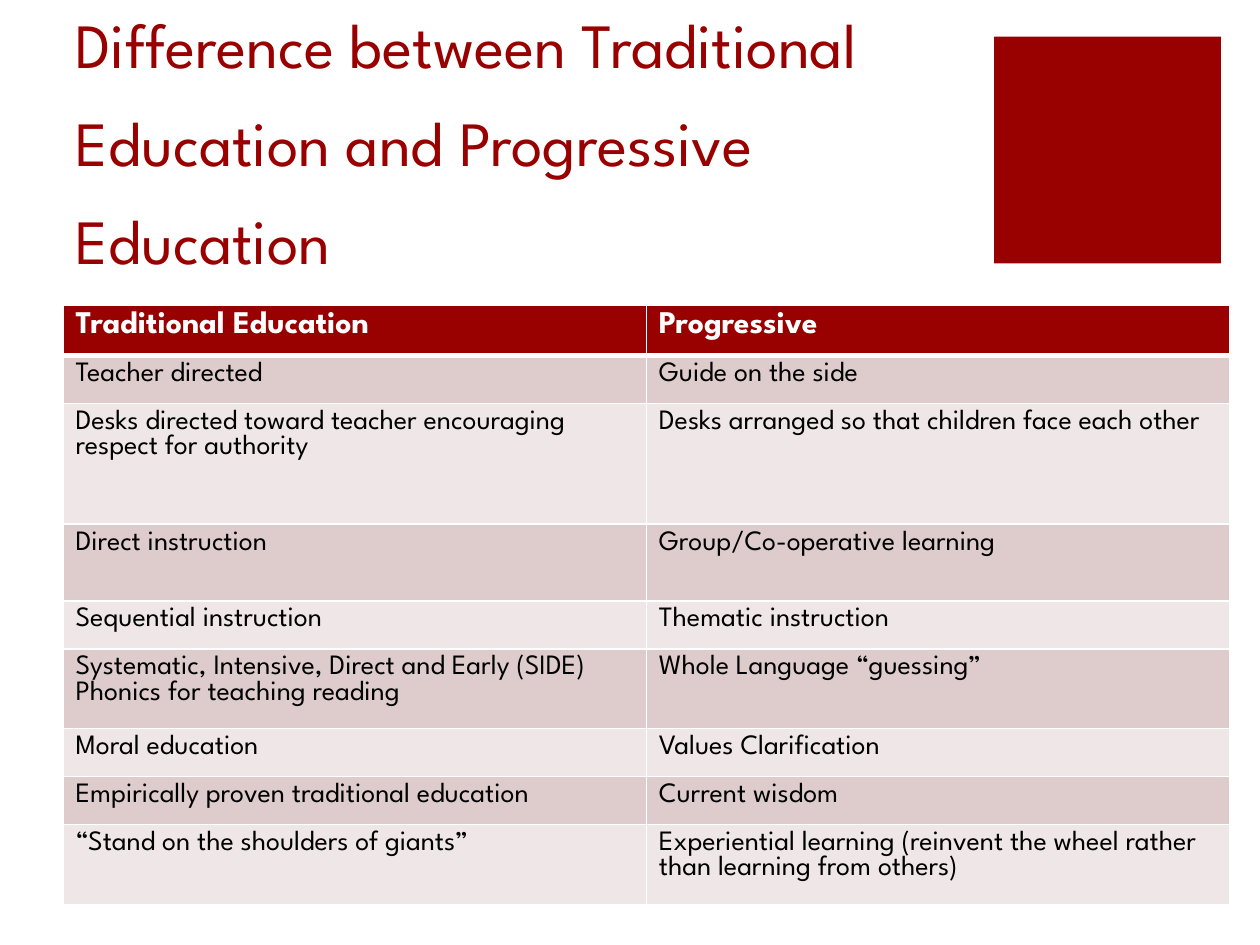
from lxml import etree
from pptx import Presentation, util as u
from pptx.dml.color import RGBColor
from pptx.enum import shapes, text
from pptx.oxml import ns

FONT = "League Spartan"
RED, WHITE, BLACK = "990000", "FFFFFF", "000000"
BANDS = ["EFE7E7", "DECCCC"]
ROWS = [
    (0.38, "Traditional Education", "Progressive"),
    (0.38, "Teacher directed", "Guide on the side"),
    (0.96, "Desks directed toward teacher encouraging respect for authority",
     "Desks arranged so that children face each other"),
    (0.61, "Direct instruction", "Group/Co-operative learning"),
    (0.38, "Sequential instruction", "Thematic instruction"),
    (0.61, "Systematic, Intensive, Direct and Early (SIDE) Phonics for teaching reading",
     "Whole Language “guessing”"),
    (0.38, "Moral education", "Values Clarification"),
    (0.38, "Empirically proven traditional education", "Current wisdom"),
    (0.38, "“Stand on the shoulders of giants”",
     "Experiential learning (reinvent the wheel rather than learning from others)"),
]


def paint(target, color):
    if hasattr(target, "solid"):
        target.solid()
        target = target.fore_color
    else:
        target = target.color
    target.rgb = RGBColor.from_string(color)


def border(cell, side, points):
    line = etree.SubElement(cell._tc.get_or_add_tcPr(), ns.qn(f"a:ln{side}"), w=str(u.Pt(points)))
    fill = etree.SubElement(line, ns.qn("a:solidFill"))
    etree.SubElement(fill, ns.qn("a:srgbClr"), val=WHITE)


deck = Presentation()
deck.slide_width, deck.slide_height = u.Inches(10), u.Inches(7.5)
page = deck.slides.add_slide(deck.slide_layouts[6])
margin = u.Inches(0.5)
column_width = u.Inches(4.63)

square = page.shapes.add_shape(
    shapes.MSO_SHAPE.RECTANGLE, u.Inches(7.89), u.Inches(0.29), u.Inches(1.8), u.Inches(1.8))
square.shadow.inherit = False
paint(square.fill, RED)
square.line.fill.background()

title = page.shapes.add_textbox(margin, u.Inches(0.19), u.Inches(7.12), u.Inches(2.06))
title.text_frame.word_wrap = True
title.text_frame.vertical_anchor = text.MSO_ANCHOR.BOTTOM
para = title.text_frame.paragraphs[0]
para.text = "Difference between Traditional Education and Progressive Education"
para.line_spacing = 1.3
para.font.name, para.font.size = FONT, u.Pt(36)
paint(para.font, RED)

height = u.Inches(sum(row[0] for row in ROWS))
table = page.shapes.add_table(len(ROWS), 2, margin, u.Inches(2.42), 2 * column_width, height).table
for column in table.columns:
    column.width = column_width

for index, (row_height, *wording) in enumerate(ROWS):
    table.rows[index].height = u.Inches(row_height)
    header = index == 0
    for cell, words in zip(table.rows[index].cells, wording):
        for side in "LRTB":
            thick = (index, side) in [(0, "B"), (1, "T")]
            border(cell, side, 3 if thick else 1)
        paint(cell.fill, RED if header else BANDS[index % 2])
        para = cell.text_frame.paragraphs[0]
        para.text = words
        para.font.name, para.font.bold = FONT, header
        para.font.size = u.Pt(18 if header else 16)
        paint(para.font, WHITE if header else BLACK)

deck.save("out.pptx")
